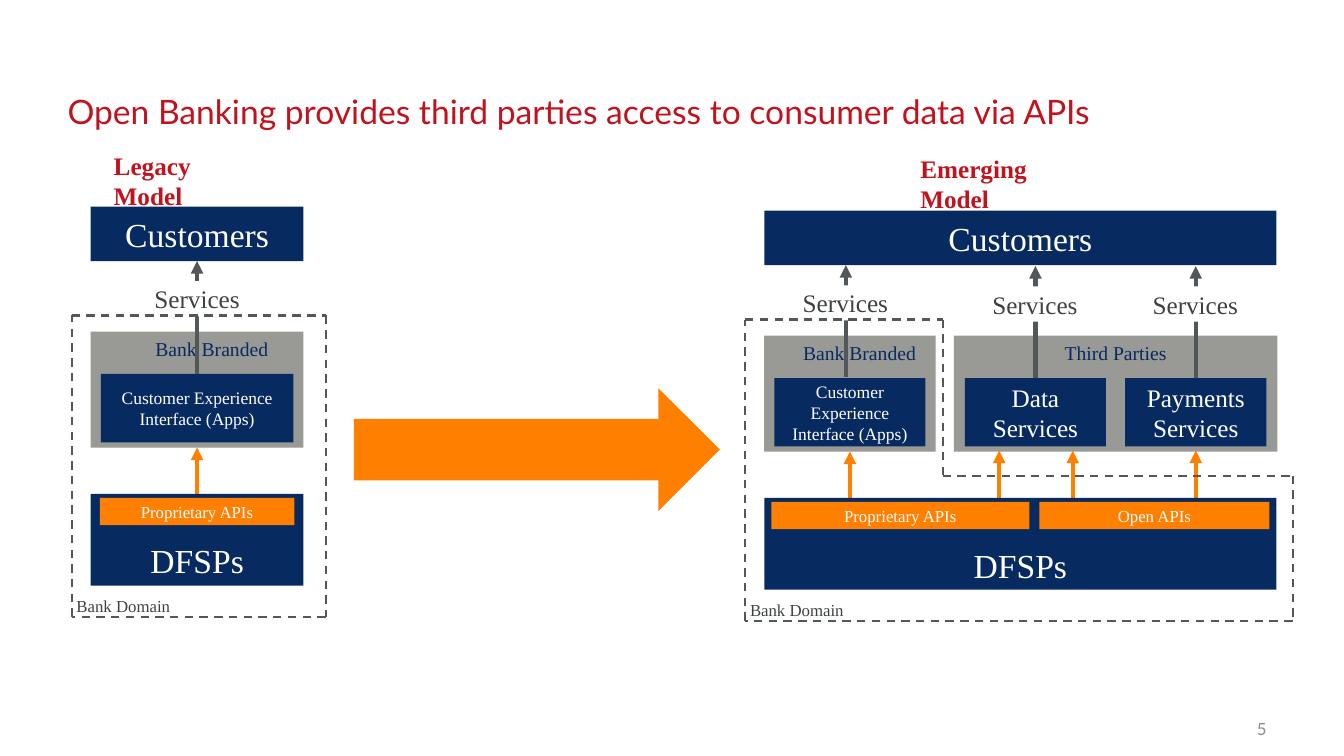
import itertools

import lxml.etree
import pptx
import pptx.dml.color
import pptx.enum.dml
import pptx.enum.shapes
import pptx.enum.text
import pptx.oxml.ns
import pptx.util
from pptx.util import Inches

RED, NAVY, ORANGE = "C1131E", "072B61", "FF7F00"
GREY, SLATE, INK, WHITE = "999996", "525759", "3E4143", "FFFFFF"
SERIF, SANS = "Times New Roman", "Lato"
ALIGN = pptx.enum.text.PP_ALIGN
ANCHOR = pptx.enum.text.MSO_ANCHOR
SHAPE = pptx.enum.shapes.MSO_SHAPE


def color(hex_value):
    return pptx.dml.color.RGBColor.from_string(hex_value)


def write(shape, text, size, ink, align, anchor, font=SERIF, bold=False):
    frame = shape.text_frame
    frame.word_wrap = True
    frame.vertical_anchor = anchor
    frame.text = text
    paragraph = frame.paragraphs[0]
    paragraph.alignment = align
    for run in paragraph.runs:
        run.font.size = pptx.util.Pt(size)
        run.font.name = font
        run.font.bold = bold
        run.font.color.rgb = color(ink)


def label(slide, box, text, size, ink, align=ALIGN.LEFT, anchor=ANCHOR.TOP,
          font=SERIF, bold=False):
    caption = slide.shapes.add_textbox(*map(Inches, box))
    write(caption, text, size, ink, align, anchor, font, bold)
    return caption


def block(slide, box, fill, text="", size=12, ink=WHITE, anchor=ANCHOR.MIDDLE,
          kind=SHAPE.RECTANGLE):
    shape = slide.shapes.add_shape(kind, *map(Inches, box))
    shape.shadow.inherit = False
    shape.fill.solid()
    shape.fill.fore_color.rgb = color(fill)
    shape.line.fill.background()
    if text:
        write(shape, text, size, ink, ALIGN.CENTER, anchor)
    return shape


def line(slide, start, end, stroke, width):
    connector = slide.shapes.add_connector(
        pptx.enum.shapes.MSO_CONNECTOR.STRAIGHT, *map(Inches, start + end))
    connector.line.color.rgb = color(stroke)
    connector.line.width = pptx.util.Pt(width)
    properties = connector._element.spPr
    lxml.etree.SubElement(properties, pptx.oxml.ns.qn("a:effectLst"))
    return connector


def arrow(slide, start, end, stroke):
    connector = line(slide, start, end, stroke, 3)
    outline = connector.line._get_or_add_ln()
    lxml.etree.SubElement(outline, pptx.oxml.ns.qn("a:tailEnd"), type="triangle")
    return connector


def domain_border(slide, corners):
    for start, end in itertools.pairwise(corners + corners[:1]):
        edge = line(slide, start, end, SLATE, 1.5)
        edge.line.dash_style = pptx.enum.dml.MSO_LINE.DASH


def services_arrow(slide, x, top):
    service = arrow(slide, (x, top + 1.65), (x, top + 0.54), SLATE)
    block(slide, (x - 0.67, top + 0.74, 1.33, 0.35), WHITE, "Services", 18, INK)
    return service


def bank_stack(slide, left, top, width, branded_width, branded_shift, service_x,
               api_arrow_xs, api_left, api_width):
    customers = block(slide, (left, top, width, 0.54), NAVY, "Customers", 24)
    branded = block(slide, (left, top + 1.24, branded_width, 1.15), GREY,
                    "Bank Branded", 14, NAVY, ANCHOR.TOP)
    branded.text_frame.margin_left = Inches(0.1 + branded_shift)
    interface = block(slide, (left + 0.1, top + 1.66, branded_width - 0.2, 0.68), NAVY,
                      "Customer Experience Interface (Apps)", 12.5)
    service = services_arrow(slide, service_x, top)
    api_arrows = [arrow(slide, (x, top + 3.14), (x, top + 2.38), ORANGE)
                  for x in api_arrow_xs]
    api_arrows[0].end_connect(branded, 2)
    block(slide, (left, top + 2.85, width, 0.91), NAVY, "DFSPs", 24, anchor=ANCHOR.BOTTOM)
    apis = block(slide, (api_left, top + 2.89, api_width, 0.27), ORANGE, "Proprietary APIs")
    label(slide, (left - 0.24, top + 3.81, 1.21, 0.3), "Bank Domain", 12, INK)
    return customers, interface, service, api_arrows[0], apis


def legacy_model(slide):
    customers, interface, service, api_arrow, apis = bank_stack(
        slide, 0.9, 2.05, 2.11, 2.11, 0.29, 1.96, [1.96], 0.99, 1.93)
    service.begin_connect(interface, 0)
    service.end_connect(customers, 2)
    api_arrow.begin_connect(apis, 2)
    domain_border(slide, [(0.71, 3.13), (3.23, 3.13), (3.23, 6.12), (0.71, 6.12)])
    label(slide, (1.03, 1.44, 1.64, 0.4), "Legacy Model", 18, RED, bold=True)


def emerging_model(slide):
    top = 2.09
    block(slide, (9.46, 3.33, 3.21, 1.15), GREY, "Third Parties", 14, NAVY, ANCHOR.TOP)
    for x, name in ((10.27, "Data"), (11.86, "Payments")):
        offering = block(slide, (x - 0.7, 3.75, 1.4, 0.68), NAVY, name + "\vServices", 18)
        services_arrow(slide, x, top + 0.01).begin_connect(offering, 0)
    bank_stack(slide, 7.58, top, 5.08, 1.7, 0.19, 8.39,
               [8.43, 9.91, 10.64, 11.86], 7.65, 2.56)
    block(slide, (10.31, 4.98, 2.28, 0.27), ORANGE, "Open APIs")
    domain_border(slide, [(7.39, 3.17), (9.35, 3.17), (9.35, 4.72),
                          (12.82, 4.72), (12.82, 6.16), (7.39, 6.16)])
    label(slide, (9.03, 1.47, 1.91, 0.4), "Emerging Model", 18, RED, bold=True)


def main():
    deck = pptx.Presentation()
    deck.slide_width, deck.slide_height = Inches(13.33), Inches(7.5)
    slide = deck.slides.add_slide(deck.slide_layouts[6])
    title = label(slide, (0.67, 0.64, 12, 0.92),
                  "Open Banking provides third parties access to consumer data via APIs",
                  24, RED, anchor=ANCHOR.MIDDLE, font=SANS)
    frame = title.text_frame
    frame.margin_left = frame.margin_right = frame.margin_top = frame.margin_bottom = 0
    label(slide, (12.11, 7.12, 0.55, 0.23), "5", 12, "8C8C8C", ALIGN.RIGHT,
          ANCHOR.MIDDLE, SANS)
    emerging_model(slide)
    legacy_model(slide)
    block(slide, (3.51, 3.85, 3.63, 1.22), ORANGE, kind=SHAPE.RIGHT_ARROW)
    deck.save("out.pptx")


if __name__ == "__main__":
    main()
